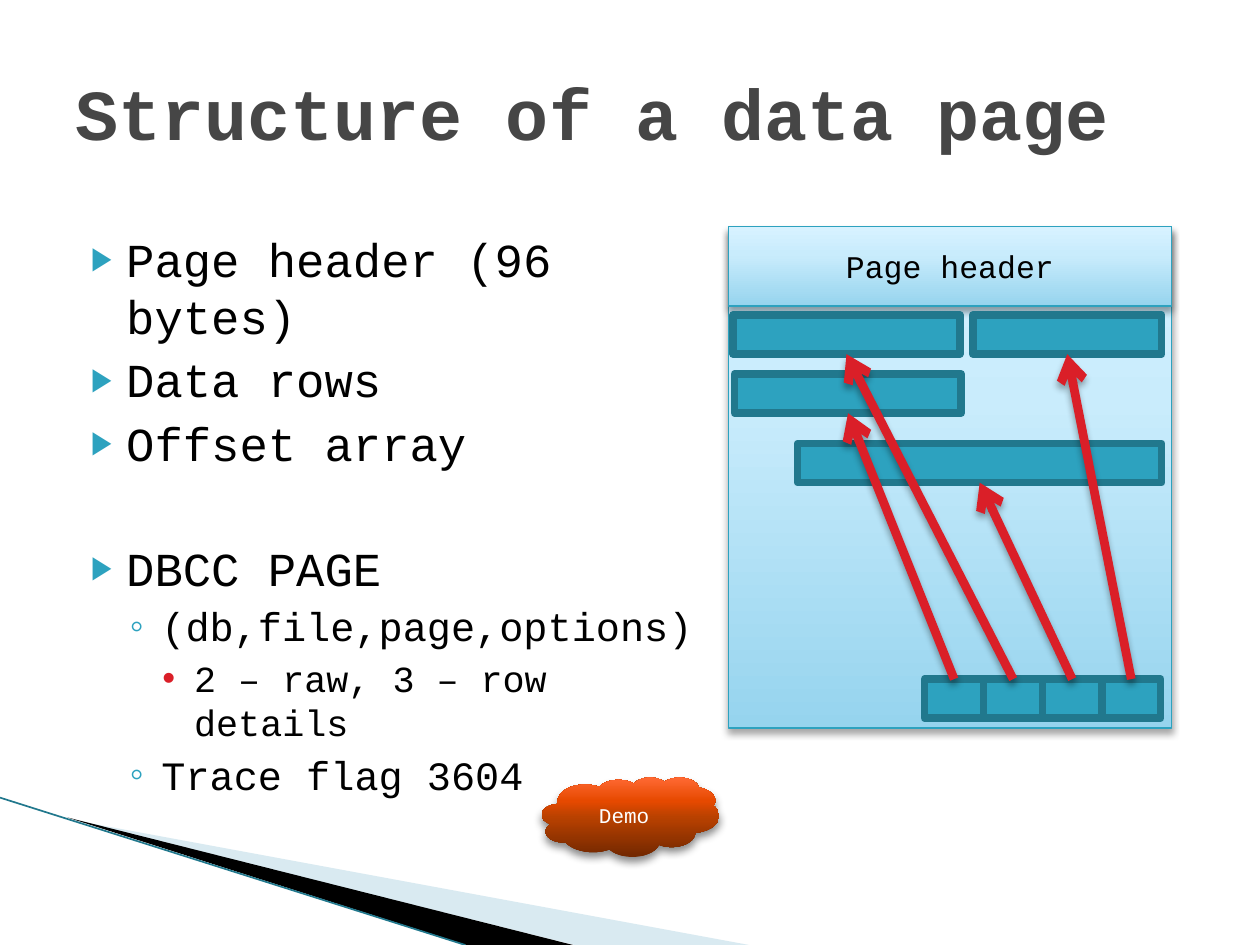
from lxml import etree
from pptx import Presentation
from pptx.dml.color import RGBColor
from pptx.enum.shapes import MSO_CONNECTOR as CONNECTOR, MSO_SHAPE as SHAPE
from pptx.enum.text import MSO_ANCHOR as ANCHOR, MSO_AUTO_SIZE as AUTO_SIZE, PP_ALIGN as ALIGN
from pptx.oxml.ns import qn
from pptx.util import Cm, Pt

PANEL_STOPS = [(0, "96D4EE"), (65, "C9ECFC"), (100, "D7F2FF")]
DEMO_STOPS = [(0, "732800"), (50, "B94100"), (70, "E64900"), (100, "FF6933")]


def color(value):
    return RGBColor.from_string(value)


def add_element(parent, tag, **attributes):
    element = etree.SubElement(parent, qn(tag))
    for name, value in attributes.items():
        element.set(name, str(value))
    return element


def add_color(parent, value, alpha=100):
    element = add_element(parent, "a:srgbClr", val=value)
    if alpha < 100:
        add_element(element, "a:alpha", val=alpha * 1000)


class SlideBuilder:
    font = "Courier New"
    teal, dark_teal, red = "2DA2BF", "21788D", "DA1F28"
    # level: left margin, hanging indent, size, space before, bullet, colour, bullet percent
    levels = [
        (1.02, 0.71, 27, 4, "▶", teal, 68),
        (1.73, 0.64, 23, 3.2, "◦", teal, 100),
        (2.39, 0.64, 21, 3.5, "•", red, 100),
    ]

    def __init__(self, presentation):
        self.slide = presentation.slides.add_slide(presentation.slide_layouts[1])

    def add_text(self, paragraph, text, size, value, bold=False):
        run = paragraph.add_run()
        run.text = text
        run.font.name = self.font
        run.font.size = Pt(size)
        run.font.bold = bold
        run.font.color.rgb = color(value)

    def place(self, shape, left, top, width, height):
        shape.left, shape.top = Cm(left), Cm(top)
        shape.width, shape.height = Cm(width), Cm(height)

    def title(self, text, box):
        shape = self.slide.shapes.title
        self.place(shape, *box)
        frame = shape.text_frame
        frame.auto_size = AUTO_SIZE.NONE
        frame.vertical_anchor = ANCHOR.MIDDLE
        frame.paragraphs[0].alignment = ALIGN.LEFT
        self.add_text(frame.paragraphs[0], text, 41, "464646", bold=True)

    def bullets(self, items, box):
        shape = self.slide.placeholders[1]
        self.place(shape, *box)
        frame = shape.text_frame
        frame.auto_size = AUTO_SIZE.NONE
        for index, (level, text, extra_space) in enumerate(items):
            paragraph = frame.add_paragraph() if index else frame.paragraphs[0]
            margin, hanging, size, before, mark, mark_color, percent = self.levels[level]
            paragraph.level = level
            properties = paragraph._p.get_or_add_pPr()
            properties.set("marL", str(Cm(margin)))
            properties.set("indent", str(-Cm(hanging)))
            add_color(add_element(properties, "a:buClr"), mark_color)
            add_element(properties, "a:buSzPct", val=percent * 1000)
            add_element(properties, "a:buFont", typeface="Arial")
            add_element(properties, "a:buChar", char=mark)
            paragraph.space_before = Pt(before + extra_space if index else 0)
            self.add_text(paragraph, text, size, "000000")

    def shadow(self, shape, alpha, blur):
        properties = shape._element.spPr
        effects = properties.find(qn("a:effectLst"))
        if effects is None:
            effects = add_element(properties, "a:effectLst")
        outer = add_element(effects, "a:outerShdw", blurRad=Pt(blur), dist=Pt(3),
                            dir=90 * 60000, rotWithShape=0)
        add_color(outer, "000000", alpha)

    def box(self, bounds, kind=SHAPE.RECTANGLE, fill=None, line=None, width=0.75):
        shape = self.slide.shapes.add_shape(kind, *[Cm(value) for value in bounds])
        shape.shadow.inherit = False
        if fill:
            shape.fill.solid()
            shape.fill.fore_color.rgb = color(fill)
        if line:
            shape.line.color.rgb = color(line)
            shape.line.width = Pt(width)
        else:
            shape.line.fill.background()
        return shape

    def gradient_box(self, bounds, stops, text=None, size=18, text_color="000000",
                     kind=SHAPE.RECTANGLE, line=None, shadow=(35, 4)):
        shape = self.box(bounds, kind, line=line)
        shape.fill.gradient()
        shape.fill.gradient_angle = 90
        stop_list = shape._element.spPr.find(qn("a:gradFill")).find(qn("a:gsLst"))
        stop_list.clear()
        for position, value in stops:
            add_color(add_element(stop_list, "a:gs", pos=position * 1000), value)
        self.shadow(shape, *shadow)
        if text:
            shape.text_frame.word_wrap = True
            shape.text_frame.vertical_anchor = ANCHOR.MIDDLE
            paragraph = shape.text_frame.paragraphs[0]
            paragraph.alignment = ALIGN.CENTER
            self.add_text(paragraph, text, size, text_color)

    def block(self, bounds):
        self.box(bounds, fill=self.teal, line=self.dark_teal, width=4.33)

    def line(self, start, end, value, width):
        points = [Cm(number) for number in (*start, *end)]
        connector = self.slide.shapes.add_connector(CONNECTOR.STRAIGHT, *points)
        connector.line.color.rgb = color(value)
        connector.line.width = Pt(width)
        add_element(connector._element.spPr, "a:effectLst")
        return connector

    def arrow(self, start, end):
        connector = self.line(start, end, self.red, 5)
        outline = connector._element.spPr.find(qn("a:ln"))
        add_element(outline, "a:tailEnd", type="arrow")
        self.shadow(connector, 35, 4)

    def wedge(self, points, value, alpha=100):
        corners = [(Cm(x), Cm(y)) for x, y in points]
        builder = self.slide.shapes.build_freeform(*corners[0])
        builder.add_line_segments(corners[1:], close=True)
        shape = builder.convert_to_shape()
        shape.shadow.inherit = False
        shape.line.fill.background()
        shape.fill.solid()
        shape.fill.fore_color.rgb = color(value)
        if alpha < 100:
            fill = shape._element.spPr.find(qn("a:solidFill"))
            add_element(fill[0], "a:alpha", val=alpha * 1000)


def main():
    presentation = Presentation()
    presentation.slide_width, presentation.slide_height = Cm(25.4), Cm(19.05)
    builder = SlideBuilder(presentation)

    # Corner decoration
    builder.wedge([(1.4, 16.52), (15.1, 19.05), (11.58, 19.05)], "A0CBDC", 40)
    builder.wedge([(1.36, 16.48), (11.55, 19.05), (9.4, 19.05)], "000000")
    builder.line((0, 16.08), (9.38, 19.05), builder.dark_teal, 0.95)

    # Title and list
    builder.title("Structure of a data page", (1.27, 0.99, 22.86, 2.54))
    builder.bullets([
        (0, "Page header (96 bytes)", 0),
        (0, "Data rows", 0),
        (0, "Offset array", 0),
        (0, "DBCC PAGE", 35),
        (1, "(db,file,page,options)", 0),
        (2, "2 – raw, 3 – row details", 0),
        (1, "Trace flag 3604", 0),
    ], (1.27, 4.51, 13.21, 12.43))

    # Page with its header
    left, top, width = 14.68, 4.57, 8.94
    builder.gradient_box((left, top, width, 10.11), PANEL_STOPS, line=builder.teal)
    builder.gradient_box((left, top, width, 1.6), PANEL_STOPS, "Page header",
                         line=builder.teal)

    # Offset slots, right to left, and the data rows they point to
    block_height, slot_width, slot_left, slot_top = 0.79, 1.19, 18.64, 13.69
    rows = [(14.81, 7.54, 4.57), (14.78, 6.35, 4.57), (16.08, 8.94, 7.34), (19.61, 6.35, 3.81)]
    for index in reversed(range(len(rows))):
        builder.block((slot_left + index * slot_width, slot_top, slot_width, block_height))
    for row_left, row_top, row_width in rows:
        builder.block((row_left, row_top, row_width, block_height))
    for index, (row_left, row_top, row_width) in enumerate(rows):
        builder.arrow((slot_left + (index + 0.5) * slot_width, slot_top),
                      (row_left + row_width / 2, row_top + block_height))

    # Demo cloud
    builder.gradient_box((10.92, 15.67, 3.58, 1.6), DEMO_STOPS, "Demo", 12, "FFFFFF",
                         kind=SHAPE.CLOUD, shadow=(45, 5))

    presentation.save("out.pptx")


if __name__ == "__main__":
    main()
